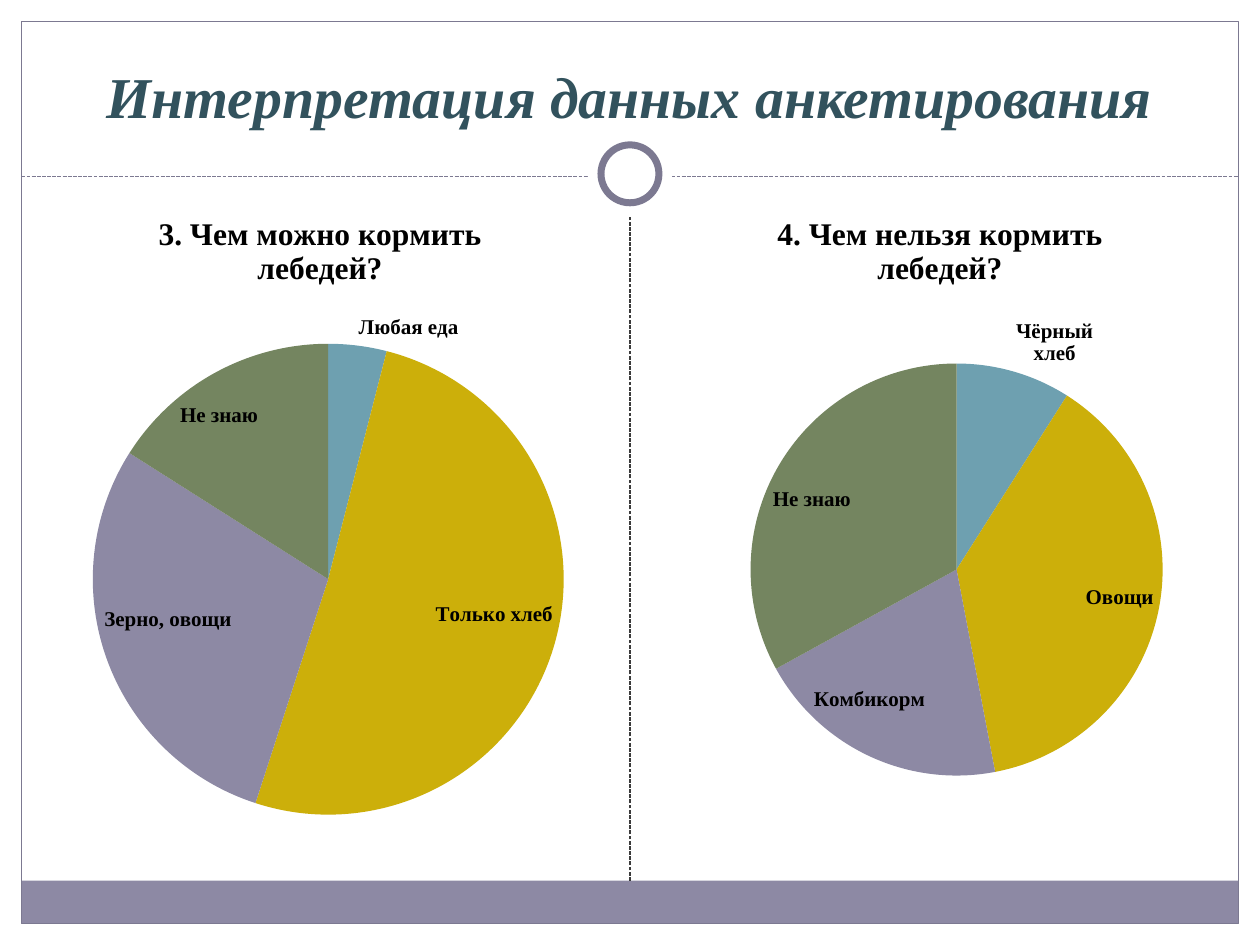
from dataclasses import dataclass
from typing import Optional

import pptx
import pptx.chart.data
import pptx.dml.color
import pptx.enum.chart
import pptx.enum.dml
import pptx.enum.shapes
import pptx.enum.text
import pptx.oxml
import pptx.oxml.ns
import pptx.util

RGB = pptx.dml.color.RGBColor
WHITE = RGB(0xFF, 0xFF, 0xFF)
BLACK = RGB(0, 0, 0)
LILAC = RGB(0x8D, 0x89, 0xA4)
PURPLE = RGB(0x7C, 0x79, 0x91)
GRAY = RGB(0x3B, 0x3B, 0x3B)
TEAL = RGB(0x32, 0x52, 0x5D)
SLICES = (RGB(0x6E, 0xA0, 0xB0), RGB(0xCC, 0xAF, 0x0A), LILAC, RGB(0x74, 0x85, 0x60))

COLS, ROWS = 100, 75
MARGIN = 1.7
CENTER = COLS / 2
SERIF = "Times New Roman"
RECT = pptx.enum.shapes.MSO_SHAPE.RECTANGLE
OVAL = pptx.enum.shapes.MSO_SHAPE.OVAL


@dataclass(frozen=True)
class Box:
    col: float
    row: float
    cols: float
    rows: float

    def emu(self) -> list[int]:
        return [grid(v) for v in (self.col, self.row, self.cols, self.rows)]


@dataclass(frozen=True)
class Panel:
    kind: int
    box: Box
    fill: Optional[RGB] = None
    line: Optional[RGB] = None
    width: float = 0.75


@dataclass(frozen=True)
class Pie:
    title: str
    col: float
    answers: dict[str, int]
    plot: tuple[float, float, float, float]


def grid(cells: float) -> int:
    return pptx.util.Inches(cells * 10 / COLS)


def add_panel(s, panel: Panel):
    sp = s.shapes.add_shape(panel.kind, *panel.box.emu())
    sp.shadow.inherit = False
    if panel.fill is None:
        sp.fill.background()
    else:
        sp.fill.solid()
        sp.fill.fore_color.rgb = panel.fill
    if panel.line is None:
        sp.line.fill.background()
    else:
        sp.line.color.rgb = panel.line
        sp.line.width = pptx.util.Pt(panel.width)
    return sp


def add_dashes(s, start: tuple[float, float], end: tuple[float, float], color: RGB):
    line = s.shapes.add_connector(
        pptx.enum.shapes.MSO_CONNECTOR.STRAIGHT, *[grid(v) for v in start + end])
    line.line.color.rgb = color
    line.line.width = pptx.util.Pt(0.75)
    line.line.dash_style = pptx.enum.dml.MSO_LINE.SQUARE_DOT
    pr = line.element.spPr
    pr.append(pr.makeelement(pptx.oxml.ns.qn("a:effectLst"), {}))
    return line


def set_font(font, size: float, color: RGB, name: str = SERIF, bold: bool = True) -> None:
    font.name = name
    font.size = pptx.util.Pt(size)
    font.bold = bold
    font.color.rgb = color


def add_title(s, text: str, box: Box) -> None:
    tf = s.shapes.add_textbox(*box.emu()).text_frame
    tf.word_wrap = True
    tf.vertical_anchor = pptx.enum.text.MSO_ANCHOR.BOTTOM
    p = tf.paragraphs[0]
    p.alignment = pptx.enum.text.PP_ALIGN.CENTER
    r = p.add_run()
    r.text = text
    set_font(r.font, 33, TEAL)
    r.font.italic = True


def place_plot(chart, plot: tuple[float, float, float, float]) -> None:
    area = chart._chartSpace.chart.plotArea
    for old in area.findall(pptx.oxml.ns.qn("c:layout")):
        area.remove(old)
    modes = '<c:layoutTarget val="inner"/><c:xMode val="edge"/><c:yMode val="edge"/>'
    shares = "".join(f'<c:{k} val="{v}"/>' for k, v in zip("xywh", plot))
    area.insert(0, pptx.oxml.parse_xml(
        f'<c:layout {pptx.oxml.ns.nsdecls("c")}><c:manualLayout>'
        f'{modes}{shares}</c:manualLayout></c:layout>'))


def add_pie(s, pie: Pie) -> None:
    data = pptx.chart.data.CategoryChartData()
    data.categories = list(pie.answers)
    data.add_series(pie.title, list(pie.answers.values()))
    chart = s.shapes.add_chart(
        pptx.enum.chart.XL_CHART_TYPE.PIE, *Box(pie.col, 15, 44.2, 51.2).emu(), data).chart
    set_font(chart.font, 10, BLACK, "Cambria", False)
    chart.has_legend = False
    chart.has_title = True
    r = chart.chart_title.text_frame.paragraphs[0].add_run()
    r.text = pie.title
    set_font(r.font, 18, BLACK)
    plot = chart.plots[0]
    plot.vary_by_categories = True
    for i, color in enumerate(SLICES):
        fill = plot.series[0].points[i].format.fill
        fill.solid()
        fill.fore_color.rgb = color
    labels = plot.series[0].data_labels
    labels.show_category_name = True
    labels.show_value = False
    labels.show_percentage = False
    labels.position = pptx.enum.chart.XL_LABEL_POSITION.BEST_FIT
    set_font(labels.font, 12, BLACK)
    place_plot(chart, pie.plot)


def main() -> None:
    prs = pptx.Presentation()
    prs.slide_width, prs.slide_height = grid(COLS), grid(ROWS)
    s = prs.slides.add_slide(prs.slide_layouts[6])
    inner = COLS - 2 * MARGIN
    for box in (Box(0, 0, COLS, 15.2), Box(0, 0, MARGIN, ROWS),
                Box(COLS - MARGIN, 0, MARGIN, ROWS)):
        add_panel(s, Panel(RECT, box, WHITE))
    footer = add_panel(s, Panel(RECT, Box(MARGIN, 69.9, inner, 3.4), LILAC))
    add_panel(s, Panel(RECT, Box(MARGIN, MARGIN, inner, ROWS - 2 * MARGIN), line=PURPLE))
    add_dashes(s, (MARGIN, 14), (COLS - MARGIN, 14), PURPLE)
    for size, line in ((6.7, None), (4.6, PURPLE)):
        ring = Box(CENTER - size / 2, 13.8 - size / 2, size, size)
        add_panel(s, Panel(OVAL, ring, WHITE, line, 4))
    divider = add_dashes(s, (CENTER, 69.9), (CENTER, 17.2), GRAY)
    divider.begin_connect(footer, 0)
    add_title(s, "Интерпретация данных анкетирования", Box(3.3, 2.5, 93.3, 8.3))
    pies = (
        Pie("3. Чем можно кормить лебедей?", 3.3,
            {"Любая еда": 4, "Только хлеб": 51, "Зерно, овощи": 29, "Не знаю": 16},
            (0.09, 0.24, 0.85, 0.73)),
        Pie("4. Чем нельзя кормить лебедей?", 52.5,
            {"Чёрный хлеб": 9, "Овощи": 38, "Комбикорм": 20, "Не знаю": 33},
            (0.16, 0.27, 0.74, 0.64)),
    )
    for pie in pies:
        add_pie(s, pie)
    prs.save("out.pptx")


if __name__ == "__main__":
    main()
